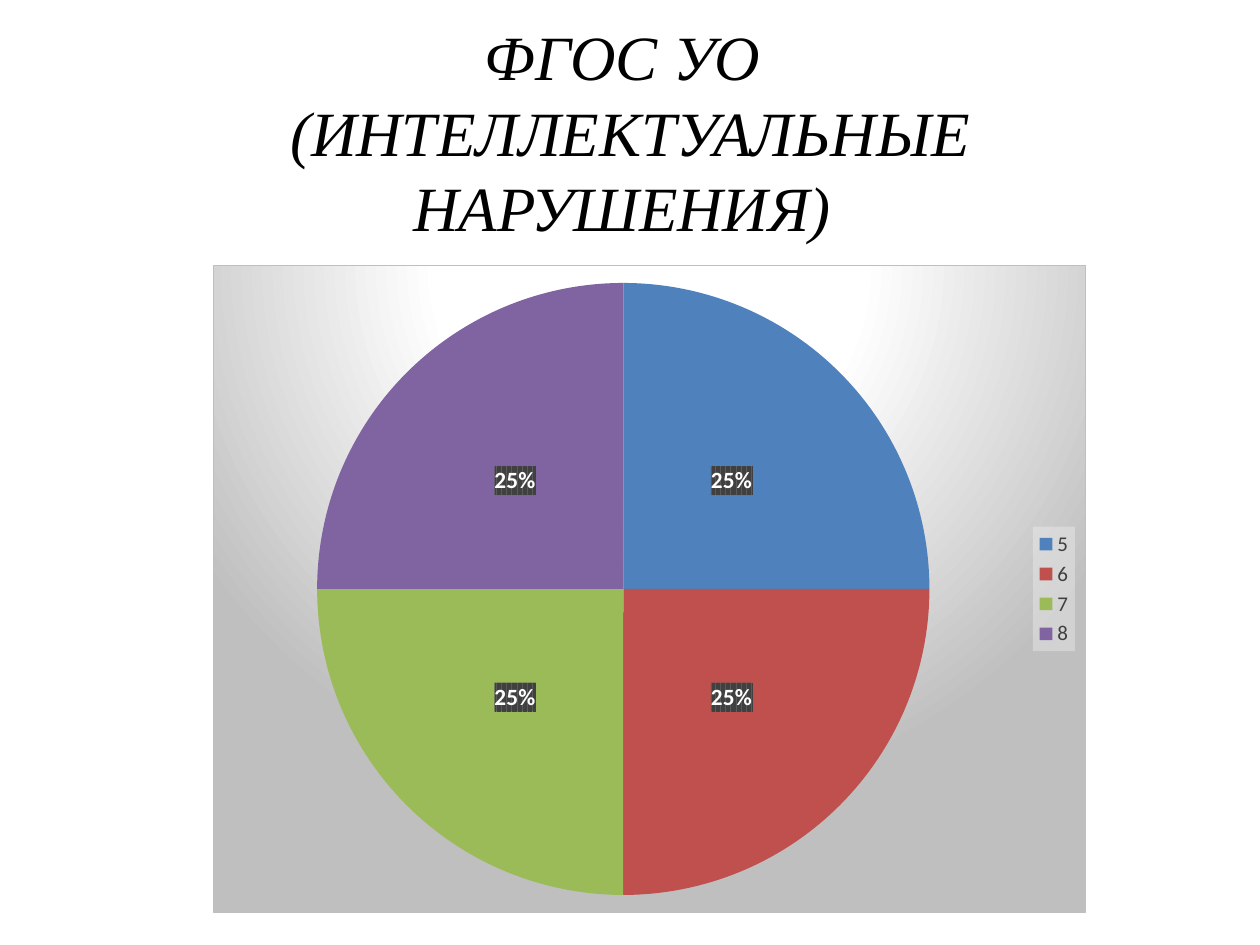
from lxml import etree
from pptx import Presentation
from pptx.chart.data import CategoryChartData
from pptx.dml.color import RGBColor
from pptx.enum.chart import XL_CHART_TYPE, XL_LABEL_POSITION, XL_LEGEND_POSITION
from pptx.enum.text import MSO_ANCHOR, PP_ALIGN
from pptx.util import Pt

PIE = XL_CHART_TYPE.PIE
LABEL_CENTER = XL_LABEL_POSITION.CENTER
LEGEND_RIGHT = XL_LEGEND_POSITION.RIGHT
MIDDLE = MSO_ANCHOR.MIDDLE
CENTER = PP_ALIGN.CENTER

TITLE = "ФГОС УО \v(ИНТЕЛЛЕКТУАЛЬНЫЕ НАРУШЕНИЯ) "
SLICES = [
    ("5", 25, "4F81BD"),
    ("6", 25, "C0504D"),
    ("7", 25, "9BBB59"),
    ("8", 25, "8064A2"),
]
PAGE_SIZE = (1260, 945)
TITLE_AREA = (63, 38, 1134, 186)
CHART_AREA = (213, 265, 873, 648)

NAMESPACES = (
    'xmlns:c="http://schemas.openxmlformats.org/drawingml/2006/chart" '
    'xmlns:a="http://schemas.openxmlformats.org/drawingml/2006/main"'
)
STOPS = [(0, "FFFFFF"), (39, "FFFFFF"), (100, "BFBFBF")]
CHART_FILL = (
    "<a:gradFill><a:gsLst>"
    + "".join(f'<a:gs pos="{stop * 1000}"><a:srgbClr val="{tone}"/></a:gs>' for stop, tone in STOPS)
    + '</a:gsLst><a:path path="circle">'
    '<a:fillToRect l="50000" t="-80000" r="50000" b="180000"/></a:path></a:gradFill>'
    '<a:ln w="9525"><a:solidFill><a:srgbClr val="BFBFBF"/></a:solidFill></a:ln>'
)
LABEL_FILL = (
    '<a:pattFill prst="dkVert"><a:fgClr><a:srgbClr val="404040"/></a:fgClr>'
    '<a:bgClr><a:srgbClr val="595959"/></a:bgClr></a:pattFill><a:ln><a:noFill/></a:ln>'
)
LEGEND_FILL = (
    '<a:solidFill><a:srgbClr val="F2F2F2"><a:alpha val="39000"/></a:srgbClr></a:solidFill>'
    "<a:ln><a:noFill/></a:ln>"
)


def px(length):
    return length * 914400 // 126


def color(value):
    return RGBColor.from_string(value)


def style_font(font, name, size, tone):
    font.name = name
    font.size = Pt(size)
    font.color.rgb = color(tone)


def shape_properties(content):
    return etree.fromstring(f"<c:spPr {NAMESPACES}>{content}</c:spPr>")


def add_title(page):
    box = page.shapes.title
    box.left, box.top, box.width, box.height = map(px, TITLE_AREA)
    frame = box.text_frame
    frame.text = TITLE
    frame.word_wrap = True
    frame.vertical_anchor = MIDDLE
    para = frame.paragraphs[0]
    para.alignment = CENTER
    style_font(para.font, "Times New Roman", 36, "000000")
    para.font.italic = True


def add_pie(page):
    data = CategoryChartData()
    data.categories = [name for name, _, _ in SLICES]
    data.add_series("Series 1", [value for _, value, _ in SLICES])
    chart = page.shapes.add_chart(PIE, *map(px, CHART_AREA), data).chart
    style_font(chart.font, "Calibri", 10, "000000")
    chart.has_title = False
    chart_space = chart.element
    chart_space.find("{*}chart").addnext(shape_properties(CHART_FILL))

    plot = chart.plots[0]
    plot.vary_by_categories = True
    series = plot.series[0]
    for index, (_, _, tone) in enumerate(SLICES):
        fill = series.points[index].format.fill
        fill.solid()
        fill.fore_color.rgb = color(tone)

    labels = series.data_labels
    labels.show_percentage = True
    labels.show_value = False
    labels.position = LABEL_CENTER
    style_font(labels.font, "Calibri", 13.3, "FFFFFF")
    labels.font.bold = True
    series_labels = series._element.find("{*}dLbls")
    series_labels.find("{*}txPr").addprevious(shape_properties(LABEL_FILL))

    chart.has_legend = True
    legend = chart.legend
    legend.position = LEGEND_RIGHT
    legend.include_in_layout = False
    style_font(legend.font, "Calibri", 12, "404040")
    legend_text = chart_space.find(".//{*}legend/{*}txPr")
    legend_text.addprevious(shape_properties(LEGEND_FILL))


def main():
    deck = Presentation()
    deck.slide_width, deck.slide_height = map(px, PAGE_SIZE)
    page = deck.slides.add_slide(deck.slide_layouts[5])
    add_title(page)
    add_pie(page)
    deck.save("out.pptx")


if __name__ == "__main__":
    main()
